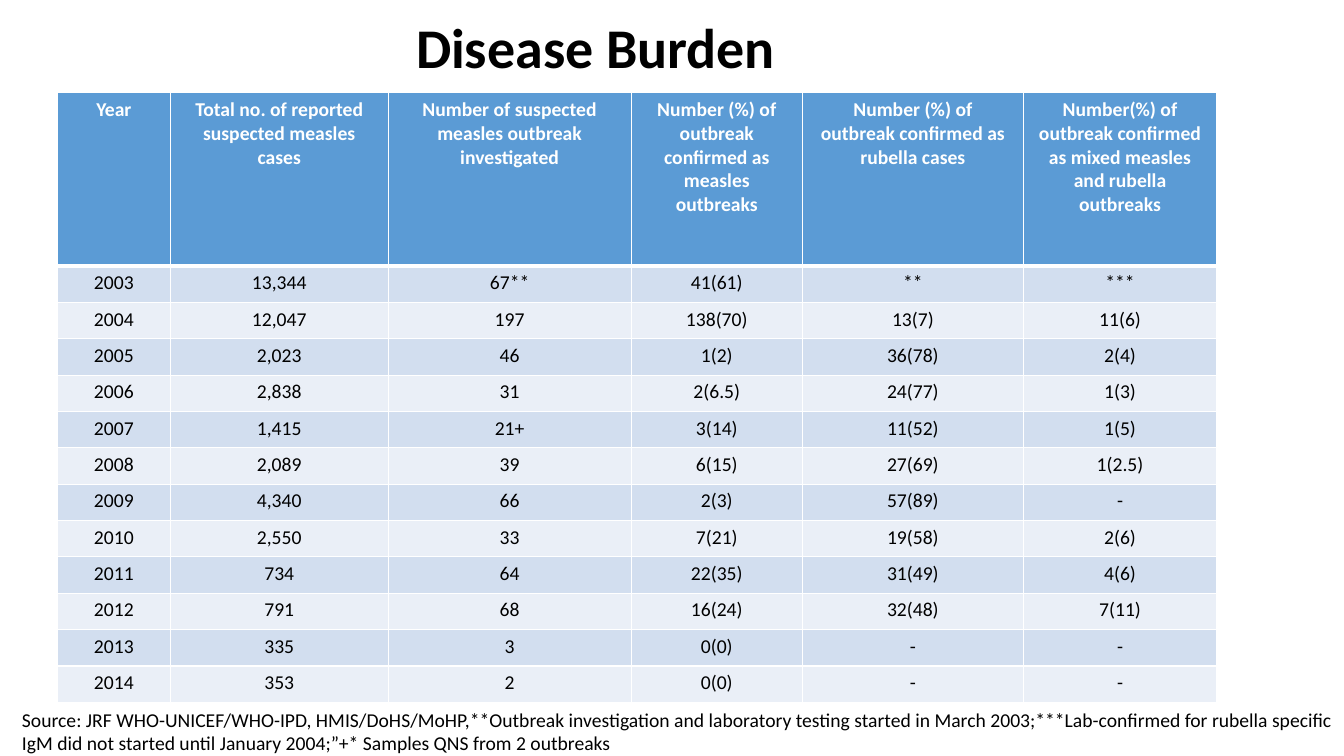
from lxml.etree import SubElement
from pptx import Presentation
from pptx.dml.color import RGBColor
from pptx.enum.text import MSO_ANCHOR, MSO_AUTO_SIZE, PP_ALIGN
from pptx.oxml.ns import qn
from pptx.util import Pt

PX = 9144
COLUMN_WIDTHS = [112, 216, 241, 170, 219, 192]
HEADER_HEIGHT = 172
HEADINGS = [
    "Year",
    "Total no. of reported suspected measles cases",
    "Number of suspected measles outbreak investigated",
    "Number (%) of outbreak confirmed as measles outbreaks",
    "Number (%) of outbreak confirmed as rubella cases",
    "Number(%) of outbreak confirmed as mixed measles and rubella outbreaks",
]
YEARS = [
    ["2003", "13,344", "67**", "41(61)", "**", "***"],
    ["2004", "12,047", "197", "138(70)", "13(7)", "11(6)"],
    ["2005", "2,023", "46", "1(2)", "36(78)", "2(4)"],
    ["2006", "2,838", "31", "2(6.5)", "24(77)", "1(3)"],
    ["2007", "1,415", "21+", "3(14)", "11(52)", "1(5)"],
    ["2008", "2,089", "39", "6(15)", "27(69)", "1(2.5)"],
    ["2009", "4,340", "66", "2(3)", "57(89)", "-"],
    ["2010", "2,550", "33", "7(21)", "19(58)", "2(6)"],
    ["2011", "734", "64", "22(35)", "31(49)", "4(6)"],
    ["2012", "791", "68", "16(24)", "32(48)", "7(11)"],
    ["2013", "335", "3", "0(0)", "-", "-"],
    ["2014", "353", "2", "0(0)", "-", "-"],
]
SOURCE_NOTE = (
    "Source: JRF WHO-UNICEF/WHO-IPD, HMIS/DoHS/MoHP,**Outbreak investigation and "
    "laboratory testing started in March 2003;***Lab-confirmed for rubella specific "
    "IgM did not started until January 2004;”+* Samples QNS from 2 outbreaks"
)


def px(*lengths):
    """Turn px lengths into a list of EMU."""
    return [length * PX for length in lengths]


def color(hex_code):
    """Turn a hex string into a colour."""
    return RGBColor.from_string(hex_code)


def write(frame, text, size, hex_code="000000", bold=False, align=PP_ALIGN.LEFT):
    """Write one formatted paragraph into a text frame."""
    frame.text = text
    paragraph = frame.paragraphs[0]
    paragraph.alignment = align
    font = paragraph.font
    font.name, font.size, font.bold = "Calibri", Pt(size), bold
    font.color.rgb = color(hex_code)
    return paragraph


def add_title(slide, box):
    """Move the title placeholder into the box and fill it."""
    title = slide.shapes.title
    title.left, title.top, title.width, title.height = px(*box)
    frame = title.text_frame
    heading = write(frame, "Disease Burden ", 40, bold=True, align=PP_ALIGN.CENTER)
    heading.line_spacing = 0.9
    frame.vertical_anchor = MSO_ANCHOR.MIDDLE
    frame.word_wrap = True
    frame.auto_size = MSO_AUTO_SIZE.NONE


def set_borders(cell, widths):
    """Draw white borders of the given point widths, by side."""
    properties = cell._tc.get_or_add_tcPr()
    for side, width in widths.items():
        line = SubElement(properties, qn(f"a:ln{side}"), w=str(Pt(width)))
        fill = SubElement(line, qn("a:solidFill"))
        SubElement(fill, qn("a:srgbClr"), val="FFFFFF")


def add_burden_table(slide, box):
    """Fill the box with the yearly measles and rubella table."""
    rows = [HEADINGS, *YEARS]
    table = slide.shapes.add_table(len(rows), len(HEADINGS), *px(*box)).table
    for column, width in zip(table.columns, px(*COLUMN_WIDTHS)):
        column.width = width
    header_height, table_height = px(HEADER_HEIGHT, box[3])
    year_height = (table_height - header_height) // len(YEARS)
    for index, values in enumerate(rows):
        is_header = index == 0
        table.rows[index].height = header_height if is_header else year_height
        background = "5B9BD5" if is_header else "D2DEEF" if index % 2 else "EAEFF7"
        top, bottom = 3 if index == 1 else 1, 3 if is_header else 1
        for cell, value in zip(table.rows[index].cells, values):
            cell.margin_left, cell.margin_right = px(12, 12)
            cell.margin_top, cell.margin_bottom = px(5, 5)
            write(cell.text_frame, value, 14, "FFFFFF" if is_header else "000000",
                  is_header, PP_ALIGN.CENTER)
            set_borders(cell, {"L": 1, "R": 1, "T": top, "B": bottom})
            cell.fill.solid()
            cell.fill.fore_color.rgb = color(background)


def add_source_note(slide, box):
    """Place the source note in the box."""
    frame = slide.shapes.add_textbox(*px(*box)).text_frame
    frame.word_wrap = True
    frame.auto_size = MSO_AUTO_SIZE.SHAPE_TO_FIT_TEXT
    write(frame, SOURCE_NOTE, 14)


def main():
    """Build and save the slide."""
    presentation = Presentation()
    presentation.slide_width, presentation.slide_height = px(1333, 750)
    slide = presentation.slides.add_slide(presentation.slide_layouts[5])
    add_title(slide, (57, 20, 1080, 60))
    add_burden_table(slide, (57, 92, sum(COLUMN_WIDTHS), 605))
    add_source_note(slide, (12, 697, 1333, 57))
    presentation.save("out.pptx")


if __name__ == "__main__":
    main()
